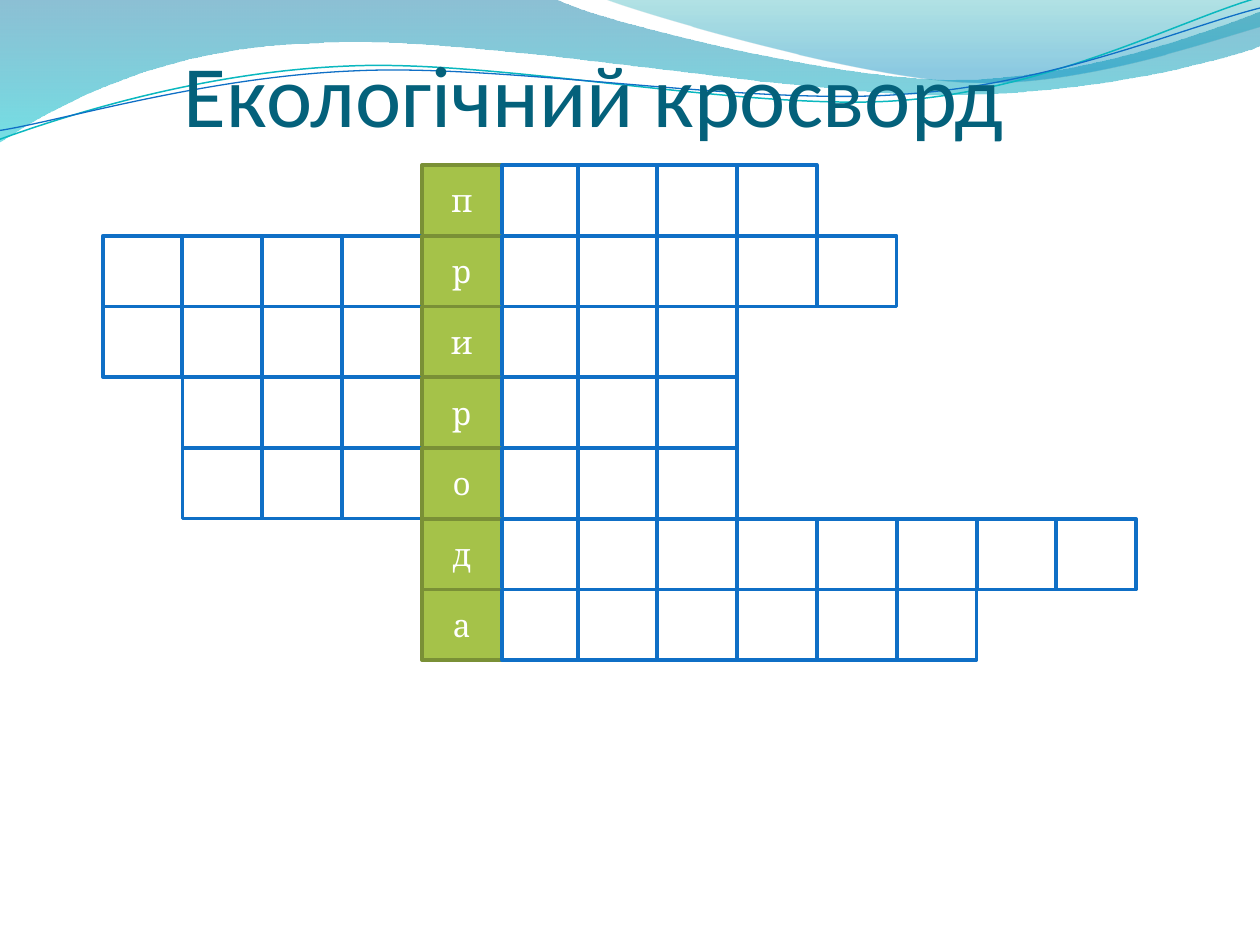
from dataclasses import dataclass

from lxml.etree import SubElement
from pptx import Presentation
from pptx.dml.color import RGBColor
from pptx.enum.shapes import MSO_SHAPE
from pptx.enum.text import MSO_ANCHOR, MSO_AUTO_SIZE, PP_ALIGN
from pptx.oxml.ns import qn
from pptx.util import Inches, Pt

SLIDE_WIDTH, SLIDE_HEIGHT = 10, 7.5
KEY_LEFT, GRID_TOP = 3.35, 1.31
COLUMN_WIDTH, ROW_HEIGHT = 3.8 / 6, 3.37 / 6
CELL_WIDTH, CELL_HEIGHT = 0.63, 0.56
OVERLAP = 0.03  # columns right of the first answer column sit closer to the key


@dataclass(frozen=True)
class Word:
    letter: str
    cells_before: int
    cells_after: int


@dataclass(frozen=True)
class GradientStop:
    position: float
    color: str
    opacity: int


@dataclass(frozen=True)
class Wave:
    """Each segment holds one end point (straight) or three Bézier points."""
    start: tuple
    segments: tuple
    stops: tuple = ()
    line: str = ""
    weight: float = 0
    rotation: float = 0


WORDS = (
    Word("п", 0, 4),
    Word("р", 4, 5),
    Word("и", 4, 3),
    Word("р", 3, 3),
    Word("о", 3, 3),
    Word("д", 0, 8),
    Word("а", 0, 6),
)

WAVES = (
    Wave((0, 0), (
        ((4.4, -0.01),),
        ((4.76, 0.17), (6.64, 0.63), (7.58, 0.63)),
        ((8.53, 0.63), (9.58, 0.26), (10, 0.09)),
        ((10.01, 0.36),),
        ((9.83, 0.44), (8.7, 0.76), (7.46, 0.75)),
        ((6.22, 0.75), (3.82, 0.28), (2.57, 0.34)),
        ((1.29, 0.36), (0.46, 0.83), (-0.01, 1.13)),
        ((0, 0),),
    ), stops=(GradientStop(0, "0074A1", 45), GradientStop(1, "00C6CF", 55))),
    Wave((4.79, -0.01), (
        ((5.09, 0.11), (6.82, 0.62), (7.69, 0.65)),
        ((8.56, 0.69), (9.61, 0.32), (10, 0.21)),
        ((10, 0),),
        ((4.79, -0.01),),
    ), stops=(GradientStop(0, "00A1A9", 30), GradientStop(0.8, "008BBF", 45))),
    Wave((-0.02, 0.87), (
        ((0.47, 0.72), (1.58, 0.41), (2.77, 0.42)),
        ((3.96, 0.42), (5.91, 0.93), (7.12, 0.9)),
        ((8.32, 0.87), (9.4, 0.36), (10, 0.22)),
    ), line="0AB8BF", weight=0.85, rotation=357.3),
    Wave((-0.02, 0.8), (
        ((0.46, 0.75), (1.64, 0.45), (2.83, 0.46)),
        ((4.03, 0.46), (5.96, 0.89), (7.16, 0.85)),
        ((8.35, 0.83), (9.42, 0.42), (10.02, 0.3)),
    ), line="0F6FC6", weight=0.75, rotation=357.3),
)


def rgb(color: str) -> RGBColor:
    return RGBColor.from_string(color)


def write_text(shape, text: str, *, size: float, font: str, color: str,
               align=PP_ALIGN.LEFT, anchor=MSO_ANCHOR.MIDDLE) -> None:
    shape.text_frame.vertical_anchor = anchor
    paragraph = shape.text_frame.paragraphs[0]
    paragraph.alignment = align
    run = paragraph.add_run()
    run.text = text
    run.font.size = Pt(size)
    run.font.name = font
    run.font.color.rgb = rgb(color)


def bend(shape, segments: tuple) -> None:
    """Merge the three straight steps of each Bézier segment into one curve."""
    steps = iter(list(shape.element.spPr.iter(qn("a:lnTo"))))
    for segment in segments:
        lines = [next(steps) for _ in segment]
        if len(lines) == 3:
            outline = lines[0].getparent()
            curve = SubElement(outline, qn("a:cubicBezTo"))
            outline.replace(lines[0], curve)
            for line in lines:
                curve.append(line[0])
            for line in lines[1:]:
                outline.remove(line)


def fill_gradient(shape, stops: tuple) -> None:
    """Fill from top to bottom with partly transparent colours."""
    shape.fill.gradient()
    shape.fill.gradient_angle = 270
    for target, stop in zip(shape.fill.gradient_stops, stops):
        target.color.rgb = rgb(stop.color)
        target.position = stop.position
    colors = shape.element.spPr.iter(qn("a:srgbClr"))
    for color, stop in zip(list(colors), stops):
        SubElement(color, qn("a:alpha"), val=str(stop.opacity * 1000))


def draw_wave(slide, wave: Wave) -> None:
    builder = slide.shapes.build_freeform(*map(Inches, wave.start))
    points = [tuple(map(Inches, point)) for segment in wave.segments for point in segment]
    builder.add_line_segments(points, close=bool(wave.stops))
    shape = builder.convert_to_shape()
    bend(shape, wave.segments)
    shape.rotation = wave.rotation
    shape.shadow.inherit = False
    if wave.stops:
        fill_gradient(shape, wave.stops)
        shape.line.fill.background()
    else:
        shape.fill.background()
        shape.line.color.rgb = rgb(wave.line)
        shape.line.width = Pt(wave.weight)


def draw_cell(slide, row: int, column: int, letter: str = "") -> None:
    """Draw one square; column 0 is the key word, negative columns lie left of it."""
    left = KEY_LEFT + column * COLUMN_WIDTH - (OVERLAP if column > 1 else 0)
    shape = slide.shapes.add_shape(
        MSO_SHAPE.RECTANGLE, Inches(left), Inches(GRID_TOP + row * ROW_HEIGHT),
        Inches(CELL_WIDTH), Inches(CELL_HEIGHT))
    shape.shadow.inherit = False
    shape.fill.solid()
    shape.fill.fore_color.rgb = rgb("A5C249" if letter else "FFFFFF")
    shape.line.color.rgb = rgb("7A9036" if letter else "0F6FC6")
    shape.line.width = Pt(2)
    if letter:
        write_text(shape, letter, size=18, font="Cambria", color="FFFFFF",
                   align=PP_ALIGN.CENTER)


def draw_word(slide, row: int, word: Word) -> None:
    for column in range(-word.cells_before, word.cells_after + 1):
        draw_cell(slide, row, column, word.letter if column == 0 else "")


def place_title(slide, text: str) -> None:
    title = slide.shapes.title
    title.left, title.top = Inches(1.46), Inches(0.21)
    title.width, title.height = Inches(7.58), Inches(0.94)
    frame = title.text_frame
    frame.auto_size = MSO_AUTO_SIZE.NONE
    frame.word_wrap = True
    frame.margin_left = frame.margin_right = frame.margin_bottom = 0
    frame.margin_top = Inches(0.05)
    write_text(title, text, size=50, font="Calibri", color="04617B",
               anchor=MSO_ANCHOR.BOTTOM)
    title.element.getparent().append(title.element)  # in front of the waves


def main() -> None:
    presentation = Presentation()
    presentation.slide_width = Inches(SLIDE_WIDTH)
    presentation.slide_height = Inches(SLIDE_HEIGHT)
    slide = presentation.slides.add_slide(presentation.slide_layouts[5])
    for wave in WAVES:
        draw_wave(slide, wave)
    place_title(slide, "Екологічний кросворд")
    for row, word in enumerate(WORDS):
        draw_word(slide, row, word)
    presentation.save("out.pptx")


if __name__ == "__main__":
    main()
